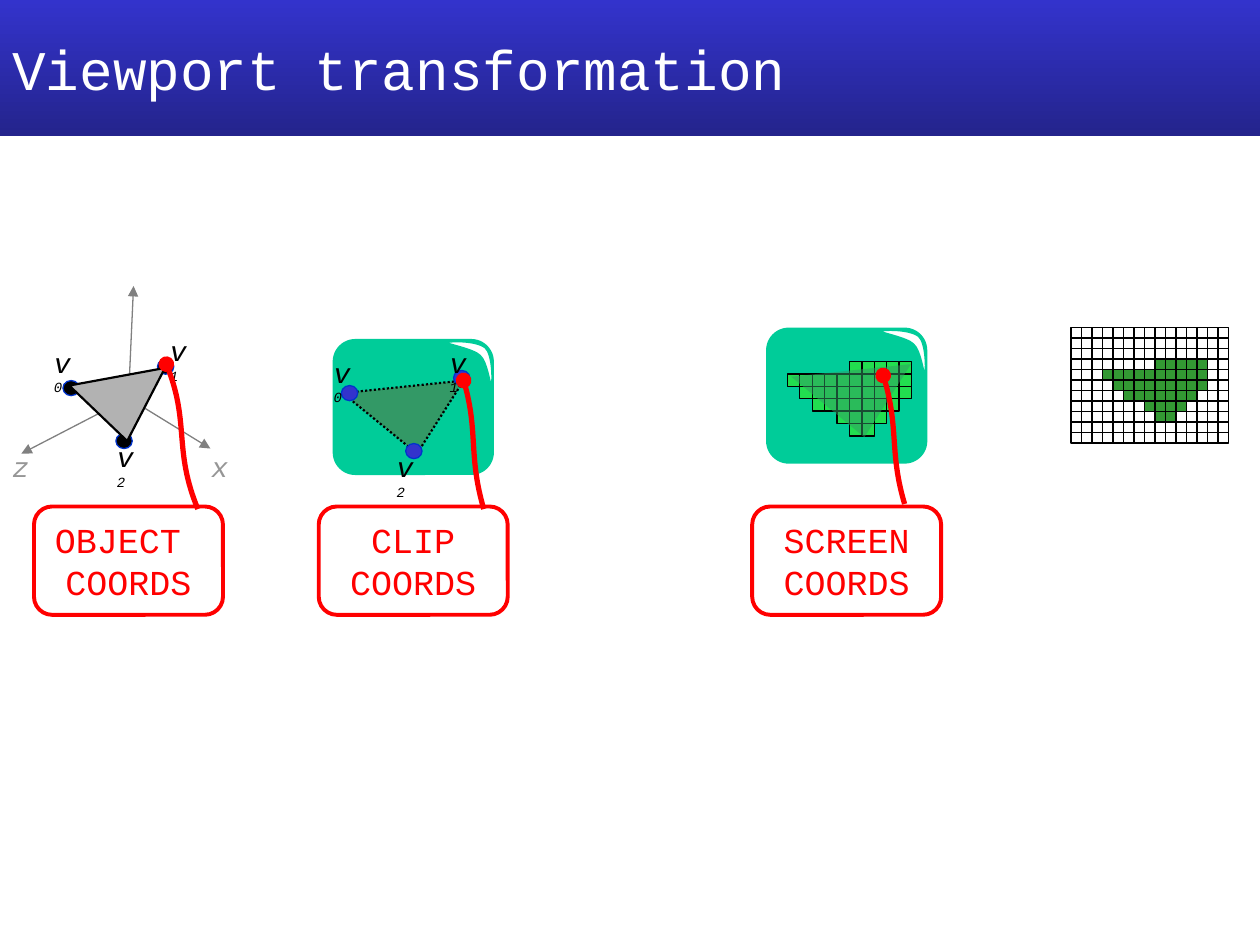
from typing import NamedTuple

from lxml import etree
from pptx import Presentation
from pptx.dml.color import RGBColor
from pptx.enum.dml import MSO_LINE
from pptx.enum.shapes import MSO_CONNECTOR, MSO_SHAPE
from pptx.enum.text import MSO_ANCHOR, PP_ALIGN
from pptx.oxml.ns import qn
from pptx.util import Inches, Pt

RECT, ROUND, OVAL = MSO_SHAPE.RECTANGLE, MSO_SHAPE.ROUNDED_RECTANGLE, MSO_SHAPE.OVAL
STRAIGHT, DOTTED = MSO_CONNECTOR.STRAIGHT, MSO_LINE.ROUND_DOT
MIDDLE, LEFT_ALIGN, CENTER = MSO_ANCHOR.MIDDLE, PP_ALIGN.LEFT, PP_ALIGN.CENTER

WHITE = RGBColor(0xFF, 0xFF, 0xFF)
BLACK = RGBColor(0, 0, 0)
RED = RGBColor(0xFF, 0, 0)
BLUE = RGBColor(0x33, 0x33, 0xCC)
DARK_BLUE = RGBColor(0x24, 0x24, 0x8C)
RIM_BLUE = RGBColor(0, 0x33, 0xCC)
SCREEN_GREEN = RGBColor(0, 0xCC, 0x99)
FRAGMENT_GREEN = RGBColor(0x22, 0xDE, 0x4F)
PIXEL_GREEN = RGBColor(0x33, 0x99, 0x33)
TRIANGLE_GREEN = RGBColor(0x33, 0x99, 0x66)
AXIS_GRAY = RGBColor(0x80, 0x80, 0x80)
LABEL_GRAY = RGBColor(0x96, 0x96, 0x96)
TRIANGLE_GRAY = RGBColor(0xB2, 0xB2, 0xB2)
FONT = "Courier New"

Point = tuple[float, float]


class Span(NamedTuple):
    """Neighbouring cells of one raster row."""
    row: int
    first: int
    count: int


class Vertex(NamedTuple):
    dot: Point
    label: Point


class Stage(NamedTuple):
    text: str
    left: float
    curve: tuple[Point, Point, Point, Point]


# The rasterised triangle
SPANS = [Span(0, 5, 5), Span(1, 0, 5), Span(1, 5, 5), Span(2, 1, 4), Span(2, 5, 5),
         Span(3, 2, 7), Span(4, 4, 4), Span(5, 5, 2)]
OBJECT_VERTICES = [Vertex((0.5, 3.02), (0.33, 2.69)),
                   Vertex((1.25, 2.85), (1.25, 2.6)),
                   Vertex((0.92, 3.44), (0.83, 3.44))]
CLIP_VERTICES = [Vertex((2.71, 3.06), (2.55, 2.77)),
                 Vertex((3.6, 2.94), (3.47, 2.69)),
                 Vertex((3.22, 3.52), (3.05, 3.52))]
STAGES = [
    Stage("OBJECT \vCOORDS", 0.27, ((1.32, 2.89), (1.51, 3.35), (1.38, 3.58), (1.57, 4.04))),
    Stage("CLIP\vCOORDS", 2.53, ((3.68, 3.02), (3.8, 3.42), (3.72, 3.63), (3.84, 4.04))),
    Stage("SCREEN\nCOORDS", 5.97, ((7.01, 2.98), (7.14, 3.39), (7.06, 3.6), (7.18, 4))),
]
# Corner reflection, relative to the screen's top left corner
GLINT = [(0.91, 0.03), (0.91, 0.04), (1.12, 0.08), (1.17, 0.13),
         (1.23, 0.18), (1.25, 0.37), (1.26, 0.36),
         (1.27, 0.35), (1.27, 0.12), (1.21, 0.07),
         (1.13, 0.01), (0.92, 0.02), (0.91, 0.03)]

prs = Presentation()
prs.slide_width, prs.slide_height = Inches(10), Inches(7.5)
s = prs.slides.add_slide(prs.slide_layouts[6])


def style(sp, fill: RGBColor | None, line: RGBColor | None, width: float = 0.75) -> None:
    sp.shadow.inherit = False
    if fill is None:
        sp.fill.background()
    else:
        sp.fill.solid()
        sp.fill.fore_color.rgb = fill
    if line is None:
        sp.line.fill.background()
    else:
        sp.line.color.rgb = line
        sp.line.width = Pt(width)


def add_box(kind, x: float, y: float, w: float, h: float,
            fill: RGBColor | None = None, line: RGBColor | None = None, width: float = 0.75):
    sp = s.shapes.add_shape(kind, Inches(x), Inches(y), Inches(w), Inches(h))
    style(sp, fill, line, width)
    return sp


def add_outline(points: list[Point], closed: bool = True):
    (x, y), *rest = [(Inches(px), Inches(py)) for px, py in points]
    builder = s.shapes.build_freeform(x, y)
    builder.add_line_segments(rest, close=closed)
    return builder.convert_to_shape()


def add_curve(points: list[Point], closed: bool = True):
    """Outline of cubic curves: each three segments become one curve."""
    sp = add_outline(points, closed)
    segments = list(sp._element.iter(qn("a:lnTo")))
    for i in range(0, len(points) - 1, 3):
        curve = etree.Element(qn("a:cubicBezTo"))
        segments[i].addprevious(curve)
        for segment in segments[i:i + 3]:
            curve.append(segment[0])
            segment.getparent().remove(segment)
    return sp


def add_arrowhead(sp, end: str, kind: str) -> None:
    etree.SubElement(sp.line._get_or_add_ln(), qn(f"a:{end}"), type=kind)


def add_line(start: Point, end: Point, color: RGBColor):
    c = s.shapes.add_connector(STRAIGHT, *(Inches(v) for v in (*start, *end)))
    c.line.color.rgb = color
    c.line.width = Pt(0.75)
    etree.SubElement(c._element.spPr, qn("a:effectLst"))
    return c


def add_label(text: str, at: Point, width: float, color: RGBColor) -> None:
    """Italic letter, with any index after it set smaller."""
    x, y = at
    tf = s.shapes.add_textbox(Inches(x), Inches(y), Inches(width), Inches(0.37)).text_frame
    tf.word_wrap = True
    p = tf.paragraphs[0]
    p.font.name, p.font.italic = FONT, True
    p.font.color.rgb = color
    for i, char in enumerate(text):
        r = p.add_run()
        r.text = char
        r.font.size = Pt(8 if i else 16)


def add_screen(x: float, y: float) -> None:
    add_box(ROUND, x, y, 1.28, 1.08, SCREEN_GREEN)
    style(add_curve([(x + dx, y + dy) for dx, dy in GLINT]), WHITE, SCREEN_GREEN)


def add_dots(vertices: list[Vertex], fill: RGBColor) -> None:
    for v in vertices:
        add_box(OVAL, *v.dot, 0.13, 0.12, fill, RIM_BLUE)


def add_vertex_labels(vertices: list[Vertex]) -> None:
    for i, v in enumerate(vertices):
        add_label(f"v{i}", v.label, 0.37, BLACK)


# Title bar
sp = add_box(RECT, 0, 0, 10, 1.08)
sp.fill.gradient()
sp.fill.gradient_angle = 270
for stop, color in zip(sp.fill.gradient_stops, (BLUE, DARK_BLUE)):
    stop.color.rgb = color
tf = sp.text_frame
tf.vertical_anchor = MIDDLE
p = tf.paragraphs[0]
p.text, p.alignment = "Viewport transformation", LEFT_ALIGN
p.font.name, p.font.size = FONT, Pt(32)
p.font.color.rgb = WHITE

# Filled pixels of the final grid: 15 columns by 11 rows
PIXEL = 1 / 12
LEFT, TOP, COLS, ROWS = 8.5, 2.6, 15, 11
RIGHT, BOTTOM = LEFT + COLS * PIXEL, TOP + ROWS * PIXEL
for span in SPANS:
    add_box(RECT, LEFT + (span.first + 3) * PIXEL, TOP + (span.row + 3) * PIXEL,
            span.count * PIXEL, PIXEL, PIXEL_GREEN)

# Screen space: fragments under a translucent triangle
add_screen(6.08, 2.6)
CELL = 0.0985
for span in SPANS:
    for col in range(span.first, span.first + span.count):
        add_box(RECT, 6.25 + col * CELL, 2.87 + span.row * CELL, CELL, CELL,
                FRAGMENT_GREEN, BLACK)
sp = add_outline([(6.28, 2.99), (6.86, 3.47), (7.23, 2.89)])
style(sp, TRIANGLE_GREEN, None)
srgb = sp._element.spPr.find(qn("a:solidFill")).find(qn("a:srgbClr"))
etree.SubElement(srgb, qn("a:alpha"), val="50000")

# Clip space: screen and triangle
add_screen(2.64, 2.69)
sp = add_outline([(2.72, 3.12), (3.31, 3.6), (3.68, 3.02)])
style(sp, TRIANGLE_GREEN, BLACK, 1.25)
sp.line.dash_style = DOTTED

# Object space: axes and triangle
for tip in ((0.17, 3.6), (1.67, 3.56), (1.06, 2.27)):
    add_arrowhead(add_line((1.02, 3.16), tip, AXIS_GRAY), "tailEnd", "triangle")
add_label("z", (0, 3.52), 0.31, LABEL_GRAY)
add_label("x", (1.58, 3.52), 0.31, LABEL_GRAY)
add_vertex_labels(OBJECT_VERTICES)
add_dots(OBJECT_VERTICES[::-1], BLACK)
style(add_outline([(0.55, 3.06), (1.01, 3.5), (1.31, 2.92)]), TRIANGLE_GRAY, BLACK, 1.25)

# Clip space: vertices
add_dots(CLIP_VERTICES[::-1], BLUE)
add_vertex_labels(CLIP_VERTICES)

# Pixel grid lines and frame
for y in (TOP + row * PIXEL for row in range(1, ROWS)):
    add_line((LEFT, y), (RIGHT, y), BLACK)
for x in (LEFT + col * PIXEL for col in range(1, COLS)):
    add_line((x, BOTTOM), (x, TOP), BLACK)
add_box(RECT, LEFT, TOP, RIGHT - LEFT, BOTTOM - TOP, line=BLACK)

# Coordinate callouts
for stage in STAGES:
    sp = add_box(ROUND, stage.left, 4.02, 1.5, 0.86, WHITE, RED, 2.25)
    tf = sp.text_frame
    tf.word_wrap = False
    tf.vertical_anchor = MIDDLE
    tf.text = stage.text
    for p in tf.paragraphs:
        p.alignment = CENTER
        p.font.name, p.font.size = FONT, Pt(20)
        p.font.color.rgb = RED
for stage in STAGES:
    sp = add_curve(stage.curve, closed=False)
    style(sp, None, RED, 3)
    add_arrowhead(sp, "headEnd", "oval")

prs.save("out.pptx")
